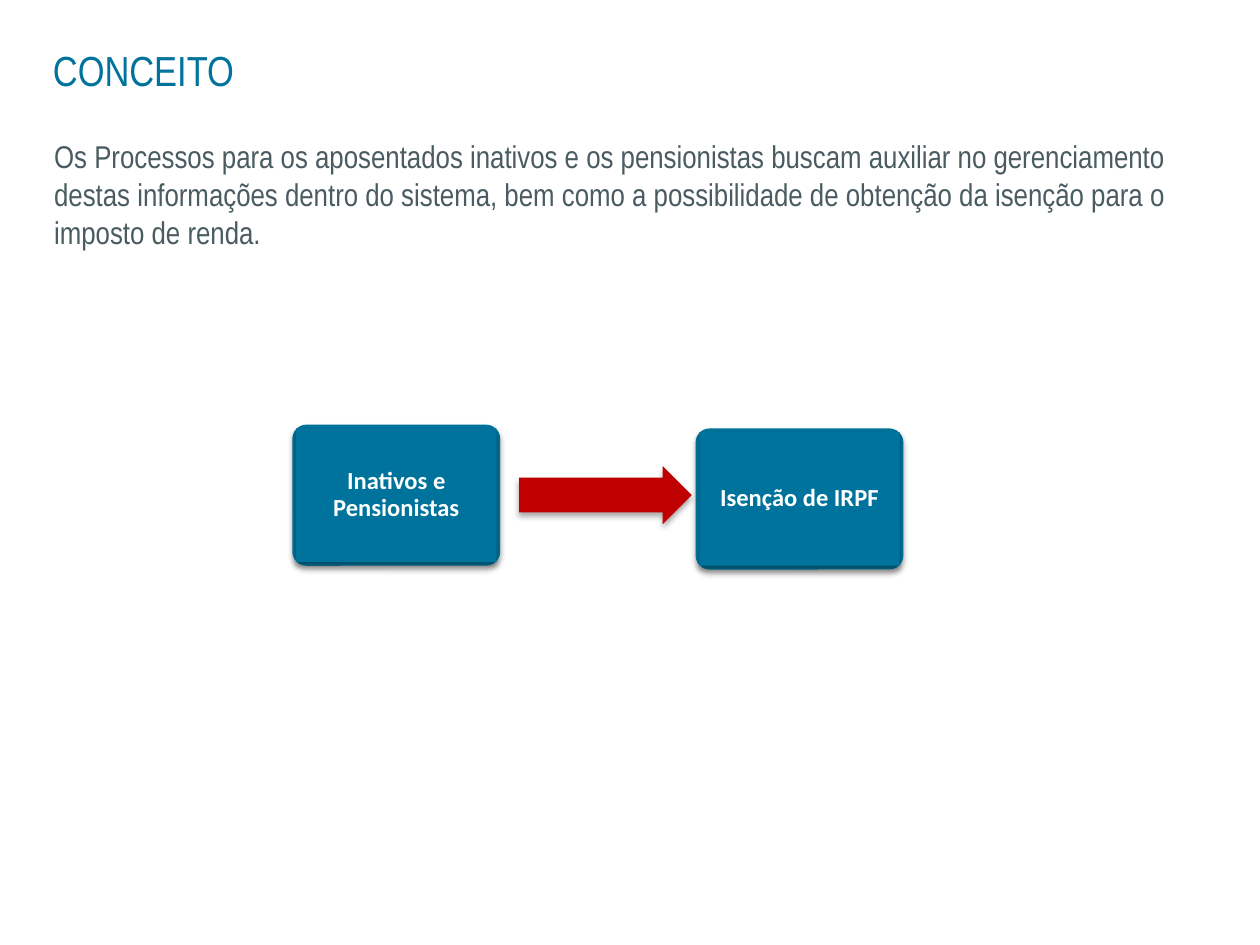
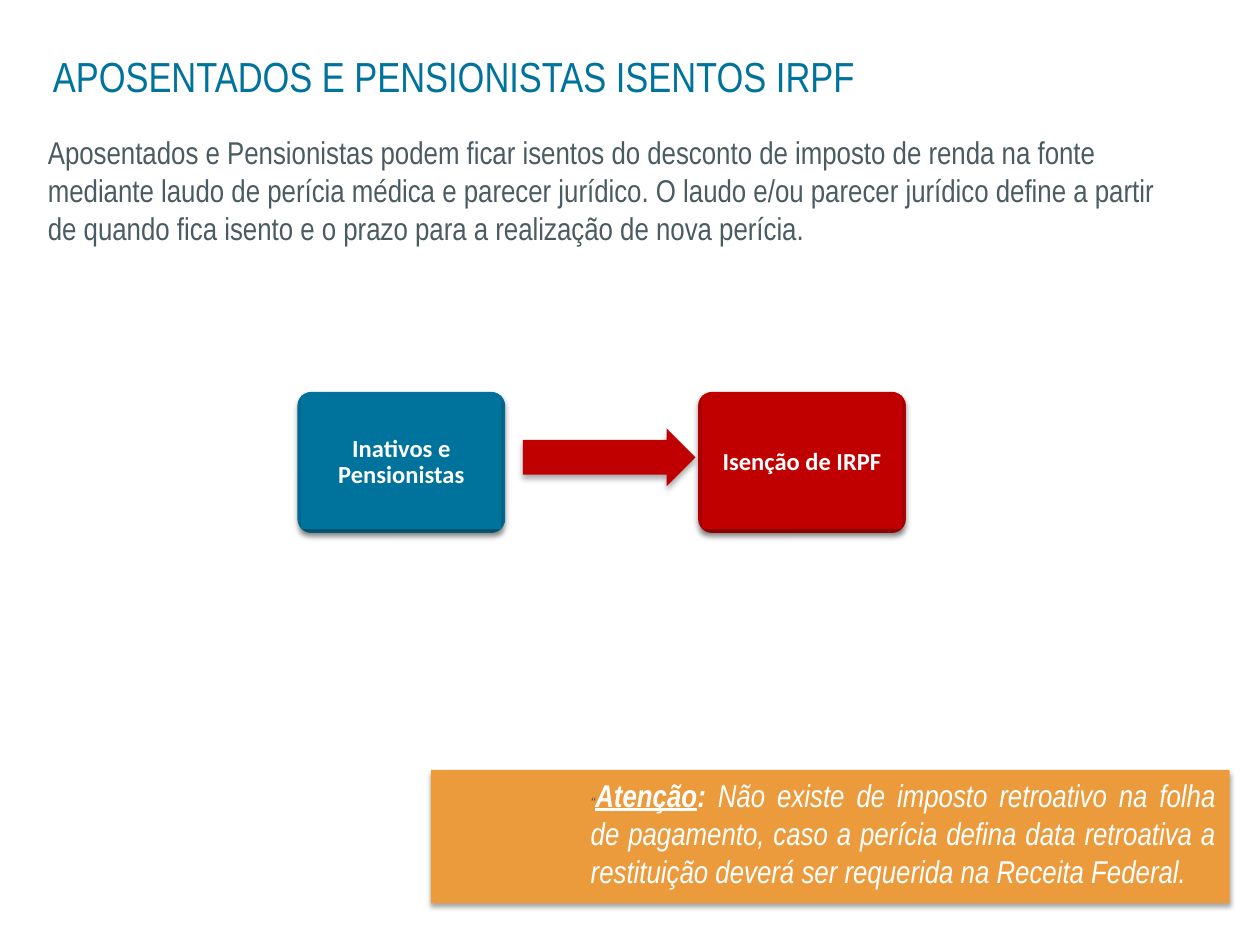
from dataclasses import dataclass

import pptx
import pptx.dml.color
import pptx.enum.shapes
import pptx.enum.text
import pptx.oxml
import pptx.oxml.ns
import pptx.util
from pptx.util import Inches

COLORS = {
    "blue": "00739C",
    "red": "C00000",
    "orange": "EC9B3C",
    "gray": "4A5C61",
    "white": "FFFFFF",
    "black": "000000",
}
NARROW = "Arial Narrow"
SHAPES = pptx.enum.shapes.MSO_SHAPE
ALIGN = pptx.enum.text.PP_ALIGN
ANCHOR = pptx.enum.text.MSO_ANCHOR


@dataclass(frozen=True)
class Area:
    left: float
    top: float
    width: float
    height: float

    def lengths(self) -> tuple:
        return tuple(Inches(value) for value in (self.left, self.top, self.width, self.height))


@dataclass(frozen=True)
class Shadow:
    opacity: int
    blur: float
    distance: float


@dataclass(frozen=True)
class Step:
    text: str
    left: float
    top: float
    color: str


@dataclass(frozen=True)
class Page:
    title: str
    title_area: Area
    body: str
    body_area: Area
    steps: tuple[Step, Step]
    arrow: Area


FLOW_SHADOW = Shadow(32, 3.5, 2.2)
NOTE_SHADOW = Shadow(35, 3.1, 1.8)
STEP_WIDTH, STEP_HEIGHT, STEP_INSET = 1.65, 1.12, 0.03

SOURCE_STEP = "Inativos e Pensionistas"
RESULT_STEP = "Isenção de IRPF"
CONCEPT = Page(
    "CONCEITO",
    Area(0.32, 0.3, 4.01, 0.66),
    "Os Processos para os aposentados inativos e os pensionistas buscam auxiliar no "
    "gerenciamento destas informações dentro do sistema, bem como a possibilidade de "
    "obtenção da isenção para o imposto de renda.",
    Area(0.37, 1.06, 9.26, 1.45),
    (Step(SOURCE_STEP, 2.32, 3.37, "blue"), Step(RESULT_STEP, 5.52, 3.4, "blue")),
    Area(4.12, 3.7, 1.37, 0.46),
)
EXEMPTION = Page(
    "APOSENTADOS E PENSIONISTAS ISENTOS IRPF",
    Area(0.32, 0.35, 9.03, 0.66),
    "Aposentados e Pensionistas podem ficar isentos do desconto de imposto de renda na "
    "fonte mediante laudo de perícia médica e parecer jurídico. O laudo e/ou parecer "
    "jurídico define a partir de quando fica isento e o prazo para a realização de nova "
    "perícia.",
    Area(0.32, 1.03, 9.03, 1.07),
    (Step(SOURCE_STEP, 2.36, 3.11, "blue"), Step(RESULT_STEP, 5.54, 3.11, "red")),
    Area(4.15, 3.4, 1.37, 0.46),
)


def rgb(color: str) -> pptx.dml.color.RGBColor:
    return pptx.dml.color.RGBColor.from_string(COLORS[color])


def set_font(font, name: str, size: float, color: str) -> None:
    font.name = name
    font.size = pptx.util.Pt(size)
    font.color.rgb = rgb(color)


def set_margins(text_frame, horizontal: float, vertical: float) -> None:
    text_frame.margin_left = text_frame.margin_right = Inches(horizontal)
    text_frame.margin_top = text_frame.margin_bottom = Inches(vertical)


def add_shadow(shape, shadow: Shadow) -> None:
    shape.shadow.inherit = False
    effects = shape._element.spPr.find(pptx.oxml.ns.qn("a:effectLst"))
    effects.append(pptx.oxml.parse_xml(
        f'<a:outerShdw {pptx.oxml.ns.nsdecls("a")} blurRad="{pptx.util.Pt(shadow.blur)}" '
        f'dist="{pptx.util.Pt(shadow.distance)}" dir="5400000" rotWithShape="0">'
        f'<a:srgbClr val="{COLORS["black"]}"><a:alpha val="{shadow.opacity * 1000}"/>'
        '</a:srgbClr></a:outerShdw>'
    ))


def add_filled(slide, kind, area: Area, color: str, shadow: Shadow, adjustments: tuple = ()):
    shape = slide.shapes.add_shape(kind, *area.lengths())
    shape.fill.solid()
    shape.fill.fore_color.rgb = rgb(color)
    shape.line.fill.background()
    add_shadow(shape, shadow)
    for index, value in enumerate(adjustments):
        shape.adjustments[index] = value
    return shape


def add_text_box(slide, area: Area):
    text_frame = slide.shapes.add_textbox(*area.lengths()).text_frame
    text_frame.word_wrap = True
    return text_frame


def add_title(slide, text: str, area: Area) -> None:
    title = slide.shapes.title
    title.left, title.top, title.width, title.height = area.lengths()
    text_frame = title.text_frame
    text_frame.text = text
    text_frame.vertical_anchor = ANCHOR.TOP
    text_frame.auto_size = pptx.enum.text.MSO_AUTO_SIZE.NONE
    paragraph = text_frame.paragraphs[0]
    paragraph.alignment = ALIGN.LEFT
    set_font(paragraph.font, NARROW, 24, "blue")


def add_body(slide, text: str, area: Area) -> None:
    text_frame = add_text_box(slide, area)
    set_margins(text_frame, 0.06, 0.03)
    text_frame.text = text
    set_font(text_frame.paragraphs[0].font, NARROW, 18, "gray")


def add_step(slide, step: Step) -> None:
    outer = Area(step.left, step.top, STEP_WIDTH, STEP_HEIGHT)
    inner = Area(
        step.left + STEP_INSET,
        step.top + STEP_INSET,
        STEP_WIDTH - 2 * STEP_INSET,
        STEP_HEIGHT - 2 * STEP_INSET,
    )
    add_filled(slide, SHAPES.ROUNDED_RECTANGLE, outer, step.color, FLOW_SHADOW, (0.1,))
    label = add_filled(slide, SHAPES.RECTANGLE, inner, step.color, FLOW_SHADOW)
    text_frame = label.text_frame
    text_frame.word_wrap = True
    text_frame.vertical_anchor = ANCHOR.MIDDLE
    set_margins(text_frame, 0.06, 0.06)
    text_frame.text = step.text
    paragraph = text_frame.paragraphs[0]
    paragraph.alignment = ALIGN.CENTER
    paragraph.line_spacing = 0.9
    set_font(paragraph.font, "Calibri", 14, "white")
    paragraph.font.bold = True


def add_page(presentation, page: Page):
    slide = presentation.slides.add_slide(presentation.slide_layouts.get_by_name("Title Only"))
    add_body(slide, page.body, page.body_area)
    add_title(slide, page.title, page.title_area)
    source, result = page.steps
    add_step(slide, source)
    add_filled(slide, SHAPES.RIGHT_ARROW, page.arrow, "red", FLOW_SHADOW, (0.6, 0.5))
    add_step(slide, result)
    return slide


def add_attention_note(slide) -> None:
    add_filled(slide, SHAPES.RECTANGLE, Area(3.42, 6.11, 6.34, 1.06), "orange", NOTE_SHADOW)
    paragraph = add_text_box(slide, Area(4.59, 6.11, 5.16, 1.01)).paragraphs[0]
    paragraph.alignment = ALIGN.JUSTIFY

    quote = paragraph.add_run()
    quote.text = "“"
    set_font(quote.font, "Arial", 8, "gray")
    quote.font.italic = True

    warning = (
        ("Atenção", True, True),
        (": ", True, False),
        ("Não existe de imposto retroativo na folha de pagamento, caso a perícia defina "
         "data retroativa a restituição deverá ser requerida na Receita Federal.", False, False),
    )
    for text, bold, underline in warning:
        run = paragraph.add_run()
        run.text = text
        set_font(run.font, NARROW, 18, "white")
        run.font.italic = True
        run.font.bold = bold
        run.font.underline = underline


def main() -> None:
    presentation = pptx.Presentation()
    presentation.slide_width = Inches(10)
    presentation.slide_height = Inches(7.5)
    add_page(presentation, CONCEPT)
    add_attention_note(add_page(presentation, EXEMPTION))
    presentation.save("out.pptx")


if __name__ == "__main__":
    main()
